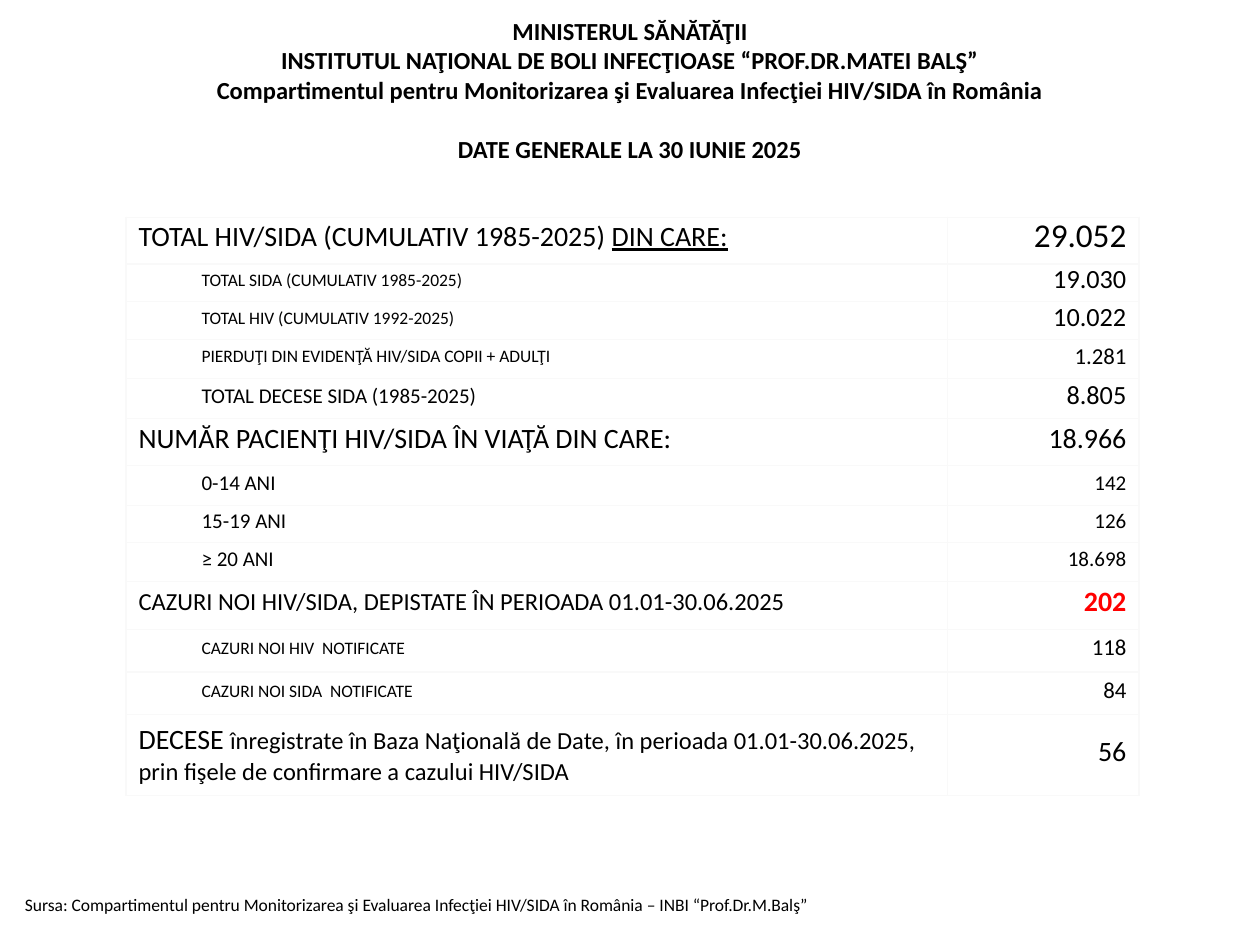
import pptx
import pptx.dml.color
import pptx.enum.text
import pptx.oxml
import pptx.oxml.ns
import pptx.util

BLACK = pptx.dml.color.RGBColor(0x00, 0x00, 0x00)
RED = pptx.dml.color.RGBColor(0xFF, 0x00, 0x00)
BORDER = pptx.dml.color.RGBColor(0xF9, 0xF9, 0xF9)

ALIGN = pptx.enum.text.PP_ALIGN
ANCHOR = pptx.enum.text.MSO_ANCHOR
AUTO_SIZE = pptx.enum.text.MSO_AUTO_SIZE

TITLE_LINES = [
    "MINISTERUL SĂNĂTĂŢII",
    "INSTITUTUL NAŢIONAL DE BOLI INFECŢIOASE “PROF.DR.MATEI BALŞ”",
    "Compartimentul pentru Monitorizarea şi Evaluarea Infecţiei HIV/SIDA în România",
]
DATE_LINE = "DATE GENERALE LA 30 IUNIE 2025"
SOURCE = ("Sursa: Compartimentul pentru Monitorizarea şi Evaluarea Infecţiei "
          "HIV/SIDA în România – INBI “Prof.Dr.M.Balş”")

COLUMN_WIDTHS = [6.52, 1.52]
ROWS = [
    (0.37, 0, [("TOTAL HIV/SIDA (CUMULATIV 1985-2025) ", 16, {}),
               ("DIN CARE:", 16, {"underline": True})], ("29.052", 19, {})),
    (0.30, 1, [("TOTAL SIDA (CUMULATIV 1985-2025)", 10, {})], ("19.030", 15, {})),
    (0.30, 1, [("TOTAL HIV (CUMULATIV 1992-2025)", 10, {})], ("10.022", 15, {})),
    (0.31, 1, [("PIERDUŢI DIN EVIDENŢĂ HIV/SIDA COPII + ADULŢI", 10, {})], ("1.281", 13, {})),
    (0.32, 1, [("TOTAL DECESE SIDA (1985-2025)", 12, {})], ("8.805", 15, {})),
    (0.37, 0, [("NUMĂR PACIENŢI HIV/SIDA ÎN VIAŢĂ DIN CARE:", 16, {})], ("18.966", 16, {})),
    (0.32, 1, [("0-14 ANI", 12, {})], ("142", 12, {})),
    (0.29, 1, [("15-19 ANI", 12, {})], ("126", 12, {})),
    (0.31, 1, [("≥ 20 ANI", 12, {})], ("18.698", 12, {})),
    (0.38, 0, [("CAZURI NOI HIV/SIDA, DEPISTATE ÎN PERIOADA 01.01-30.06.2025", 14, {})],
     ("202", 16, {"bold": True, "color": RED})),
    (0.34, 1, [("CAZURI NOI HIV  NOTIFICATE", 10, {})], ("118", 13, {})),
    (0.34, 1, [("CAZURI NOI SIDA  NOTIFICATE", 10, {})], ("84", 13, {})),
    (0.64, 0, [("DECESE ", 16, {}),
               ("înregistrate în Baza Naţională de Date, în perioada 01.01-30.06.2025, "
                "prin fişele de confirmare a cazului HIV/SIDA", 14, {})], ("56", 16, {})),
]


def apply(target, values):
    for name, value in values.items():
        setattr(target, name, value)


class SlideBuilder:
    font_name = "Calibri"
    indent = pptx.util.Inches(0.5)
    tight = 0.6

    def __init__(self, presentation):
        self.width = presentation.slide_width
        self.height = presentation.slide_height
        self.slide = presentation.slides.add_slide(presentation.slide_layouts[5])

    def box(self, left, top, width, height):
        return {"left": round(left * self.width), "top": round(top * self.height),
                "width": round(width * self.width), "height": round(height * self.height)}

    def style(self, font, size, color=BLACK, **values):
        apply(font, {"name": self.font_name, "size": pptx.util.Pt(size), **values})
        font.color.rgb = color

    def title(self, lines, date_line, place):
        shape = self.slide.shapes.title
        apply(shape, self.box(*place))
        frame = shape.text_frame
        apply(frame, {"auto_size": AUTO_SIZE.NONE, "word_wrap": True,
                      "vertical_anchor": ANCHOR.MIDDLE})
        heading, date = frame.paragraphs[0], frame.add_paragraph()
        heading.text = "\v".join(lines)
        date.text = date_line
        date.space_before = pptx.util.Pt(17)
        for paragraph in frame.paragraphs:
            paragraph.alignment = ALIGN.CENTER
            for run in paragraph.runs:
                self.style(run.font, 14, bold=True)

    def text(self, content, size, place):
        shape = self.slide.shapes.add_textbox(**self.box(*place))
        frame = shape.text_frame
        apply(frame, {"word_wrap": False, "auto_size": AUTO_SIZE.SHAPE_TO_FIT_TEXT})
        run = frame.paragraphs[0].add_run()
        run.text = content
        self.style(run.font, size)

    def cell(self, cell, runs, alignment, spacing, level=0):
        cell.fill.background()
        cell.vertical_anchor = ANCHOR.MIDDLE
        paragraph = cell.text_frame.paragraphs[0]
        apply(paragraph, {"alignment": alignment, "level": level, "line_spacing": spacing,
                          "space_before": pptx.util.Pt(0.2 * runs[0][1])})
        if level:
            properties = paragraph._p.get_or_add_pPr()
            properties.set("marL", str(self.indent))
            properties.set("indent", "0")
        for content, size, values in runs:
            run = paragraph.add_run()
            run.text = content
            self.style(run.font, size, **values)
        self.borders(cell)

    def borders(self, cell):
        properties = cell._tc.get_or_add_tcPr()
        for position, side in enumerate(("lnL", "lnR", "lnT", "lnB")):
            properties.insert(position, pptx.oxml.parse_xml(
                f'<a:{side} {pptx.oxml.ns.nsdecls("a")} w="{pptx.util.Pt(0.75)}">'
                f'<a:solidFill><a:srgbClr val="{BORDER}"/></a:solidFill></a:{side}>'))

    def table(self, rows, column_widths, place):
        shape = self.slide.shapes.add_table(len(rows), len(column_widths), **self.box(*place))
        table = shape.table
        apply(table, {"first_row": False, "horz_banding": False})
        for column, width in zip(table.columns, column_widths):
            column.width = pptx.util.Inches(width)
        for row, (height, level, label, value) in zip(table.rows, rows):
            row.height = pptx.util.Inches(height)
            spacing = 1.0 if len(label) > 1 and row is not None and height > 0.5 else self.tight
            self.cell(row.cells[0], label, ALIGN.LEFT, spacing, level)
            self.cell(row.cells[1], [value], ALIGN.RIGHT, self.tight)


def main():
    presentation = pptx.Presentation()
    apply(presentation, {"slide_width": pptx.util.Inches(10),
                         "slide_height": pptx.util.Inches(7.5)})
    builder = SlideBuilder(presentation)
    builder.title(TITLE_LINES, DATE_LINE, (0, 0.03, 1, 0.13))
    builder.table(ROWS, COLUMN_WIDTHS, (0.1, 0.23, 0.8, 0.61))
    builder.text(SOURCE, 10, (0.01, 0.94, 0.67, 0.04))
    presentation.save("out.pptx")


if __name__ == "__main__":
    main()
